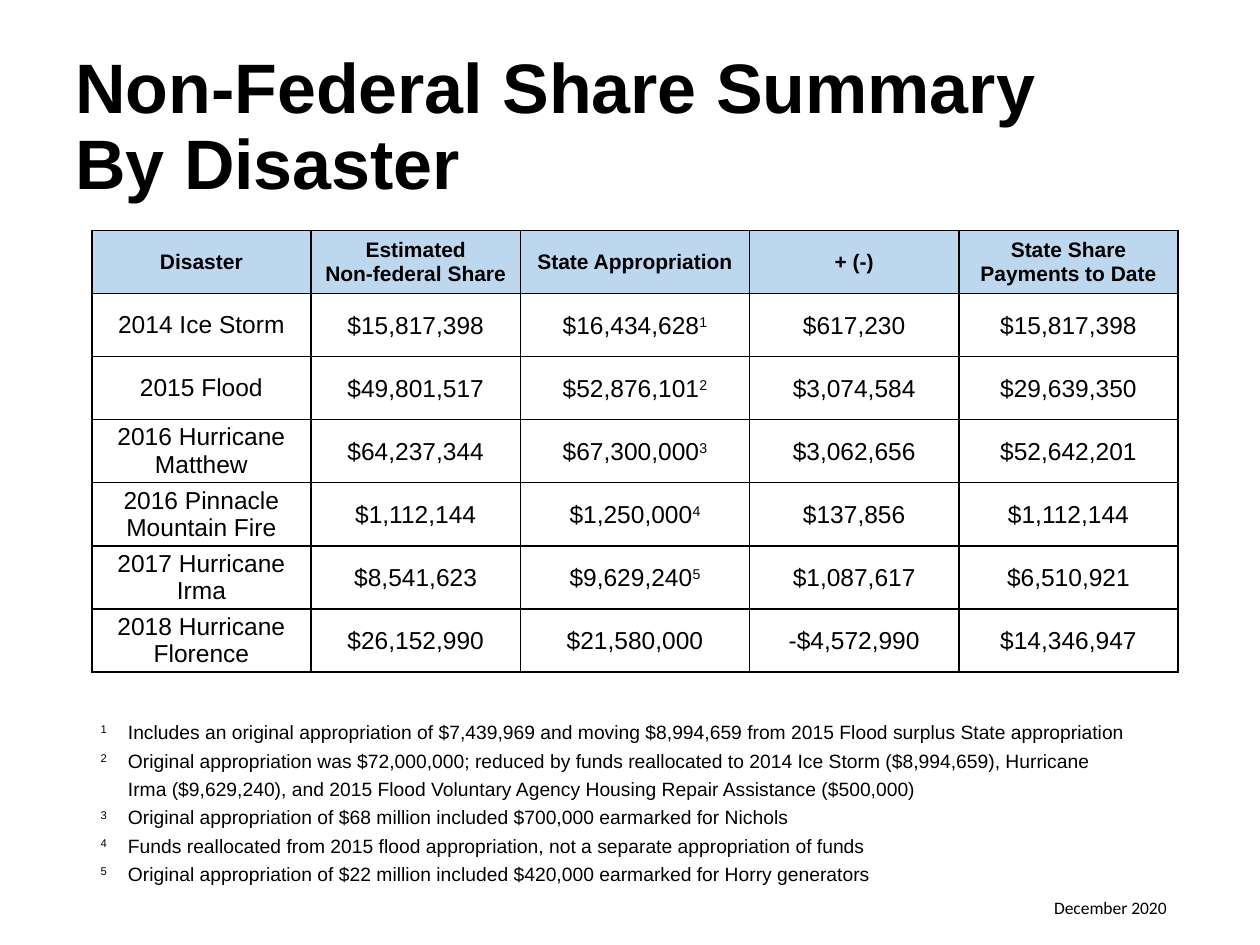
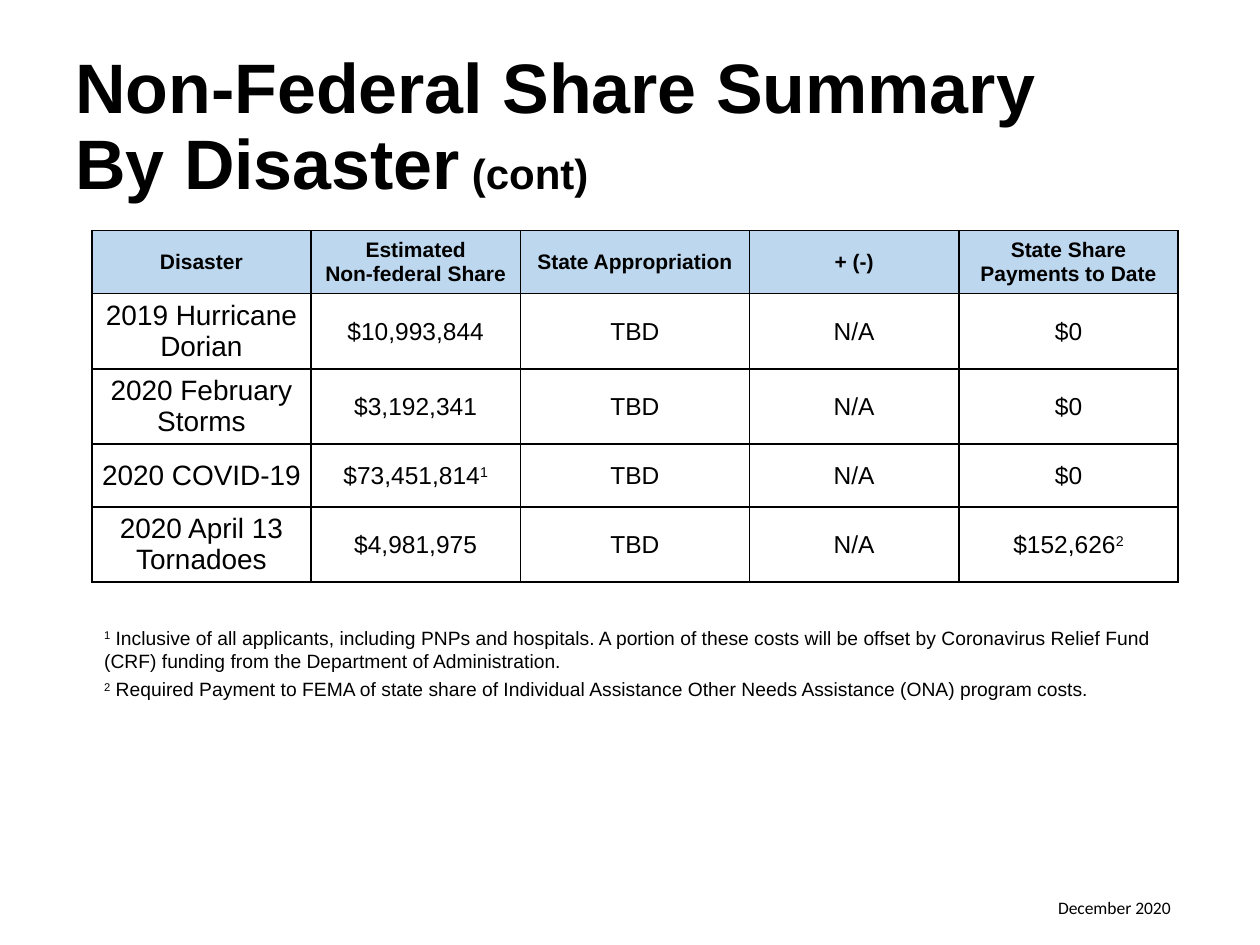
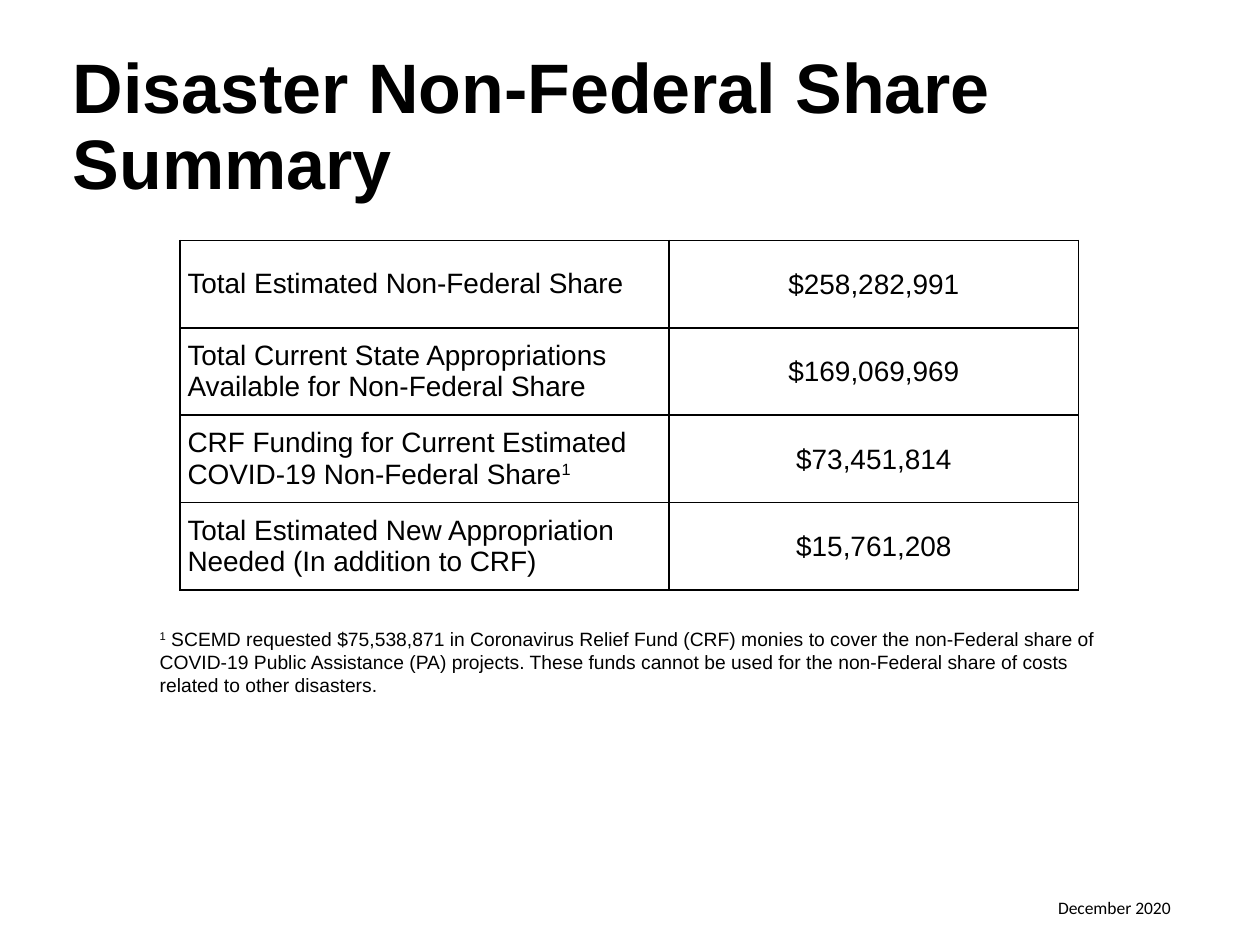
"""Builds three slides that sum up the non-federal share of disaster costs."""
from lxml.etree import SubElement as Sub
from pptx import Presentation
from pptx.dml.color import RGBColor as Rgb
from pptx.enum.text import MSO_ANCHOR as Anchor, PP_ALIGN as Align
from pptx.oxml.ns import qn
from pptx.util import Cm, Pt

BLACK, WHITE, BLUE = "000000", "FFFFFF", "BDD7EE"
TITLE = "Non-Federal Share Summary\vBy Disaster"
HEAD = ["Disaster", "Estimated\nNon-federal Share", "State Appropriation",
        "+ (-)", "State Share Payments to Date"]
WIDE = [4.42, 4.22, 4.62, 4.22, 4.42]


def write(frame, text, size, name="Arial", bold=False, align=Align.LEFT):
    """Fill a frame line by line, raising the parts between carets."""
    lines = text.split("\n")
    frame.text = text.replace("^", "")
    for para, line in zip(frame.paragraphs, lines):
        parts = line.split("^")
        para.text = parts[0]
        para.alignment = align
        for spot, part in enumerate(parts[1:], 1):
            run = para.add_run()
            run.text = part
            if spot % 2:
                run.font._element.set("baseline", "30000")
        for run in para.runs:
            font = run.font
            font.name, font.size, font.bold = name, Pt(size), bold
            font.color.rgb = Rgb.from_string(BLACK)


def add_text(slide, box, text, size, **look):
    """Add a wrapped text box and return its frame."""
    frame = slide.shapes.add_textbox(*[Cm(n) for n in box]).text_frame
    frame.word_wrap = True
    write(frame, text, size, **look)
    return frame


pages = [
    dict(title=TITLE, more="", left=1.27, date=21.0,
         spot=(1.85, 4.65), cols=WIDE, tall=1.27, sizes=(14, 14), head=True,
         rows=[
             HEAD,
             ["2014 Ice Storm", "$15,817,398", "$16,434,628^1", "$617,230", "$15,817,398"],
             ["2015 Flood", "$49,801,517", "$52,876,101^2", "$3,074,584", "$29,639,350"],
             ["2016 Hurricane Matthew", "$64,237,344", "$67,300,000^3", "$3,062,656",
              "$52,642,201"],
             ["2016 Pinnacle Mountain Fire", "$1,112,144", "$1,250,000^4", "$137,856",
              "$1,112,144"],
             ["2017 Hurricane Irma", "$8,541,623", "$9,629,240^5", "$1,087,617", "$6,510,921"],
             ["2018 Hurricane\nFlorence", "$26,152,990", "$21,580,000", "-$4,572,990",
              "$14,346,947"]],
         box=(1.78, 14.4, 21.87, 4.2), hang=0.55,
         notes="^1^\tIncludes an original appropriation of $7,439,969 and moving $8,994,659 "
               "from 2015 Flood surplus State appropriation\n"
               "^2^\tOriginal appropriation was $72,000,000; reduced by funds reallocated to "
               "2014 Ice Storm ($8,994,659), Hurricane\n"
               "\tIrma ($9,629,240), and 2015 Flood Voluntary Agency Housing Repair "
               "Assistance ($500,000)\n"
               "^3^\tOriginal appropriation of $68 million included $700,000 earmarked for "
               "Nichols\n"
               "^4^\tFunds reallocated from 2015 flood appropriation, not a separate "
               "appropriation of funds\n"
               "^5^\tOriginal appropriation of $22 million included $420,000 earmarked for "
               "Horry generators"),
    dict(title=TITLE, more=" (cont)", left=1.27, date=21.08,
         spot=(1.85, 4.65), cols=WIDE, tall=1.27, sizes=(16, 14), head=True,
         rows=[
             HEAD,
             ["2019 Hurricane Dorian", "$10,993,844", "TBD", "N/A", "$0"],
             ["2020 February Storms", "$3,192,341", "TBD", "N/A", "$0"],
             ["2020 COVID-19", "$73,451,814^1", "TBD", "N/A", "$0"],
             ["2020 April 13 Tornadoes", "$4,981,975", "TBD", "N/A", "$152,626^2"]],
         box=(1.85, 12.5, 21.87, 2.92), hang=0,
         notes="^1^ Inclusive of all applicants, including PNPs and hospitals. A portion of "
               "these costs will be offset by Coronavirus Relief Fund (CRF) funding from the "
               "Department of Administration.\n"
               "^2^ Required Payment to FEMA of state share of Individual Assistance Other "
               "Needs Assistance (ONA) program costs."),
    dict(title="Disaster Non-Federal Share Summary", more="", left=1.22, date=21.08,
         spot=(3.63, 4.85), cols=[9.86, 8.25], tall=1.76, sizes=(16, 16), head=False,
         rows=[
             ["Total Estimated Non-Federal Share", "$258,282,991"],
             ["Total Current State Appropriations Available for Non-Federal Share",
              "$169,069,969"],
             ["CRF Funding for Current Estimated COVID-19 Non-Federal Share^1", "$73,451,814"],
             ["Total Estimated New Appropriation Needed (In addition to CRF)",
              "$15,761,208"]],
         box=(2.97, 12.52, 19.48, 2.13), hang=0,
         notes="^1^ SCEMD requested $75,538,871 in Coronavirus Relief Fund (CRF) monies to "
               "cover the non-Federal share of COVID-19 Public Assistance (PA) projects. These "
               "funds cannot be used for the non-Federal share of costs related to other "
               "disasters."),
]

deck = Presentation()
deck.slide_width, deck.slide_height = Cm(25.4), Cm(19.05)

for page in pages:
    slide = deck.slides.add_slide(deck.slide_layouts[6])

    rows, cols = page["rows"], page["cols"]
    size = sum(cols), page["tall"] * len(rows)
    table = slide.shapes.add_table(
        len(rows), len(cols), *[Cm(n) for n in page["spot"] + size]).table
    table.first_row = page["head"]
    table.horz_banding = False
    for col, width in zip(table.columns, cols):
        col.width = Cm(width)
    for r, row in enumerate(rows):
        table.rows[r].height = Cm(page["tall"])
        top = page["head"] and r == 0
        for c, text in enumerate(row):
            cell = table.cell(r, c)
            label = top or c == 0
            left = c == 0 and not page["head"]
            write(cell.text_frame, text, 12 if top else page["sizes"][c > 0],
                  bold=top, align=Align.LEFT if left else Align.CENTER)
            cell.vertical_anchor = Anchor.MIDDLE
            cell.margin_left = cell.margin_right = Cm(0.15 if label else 0.03)
            cell.margin_top = Cm(0.08 if label else 0.03)
            cell.margin_bottom = Cm(0.08 if label else 0)
            props = cell._tc.get_or_add_tcPr()
            for side in ("lnL", "lnR", "lnT", "lnB"):
                line = Sub(props, qn("a:" + side), w=str(Pt(1)))
                Sub(Sub(line, qn("a:solidFill")), qn("a:srgbClr"), val=BLACK)
            cell.fill.solid()
            cell.fill.fore_color.rgb = Rgb.from_string(BLUE if top else WHITE)

    notes = add_text(slide, page["box"], page["notes"], 11)
    for para in notes.paragraphs:
        para.space_after = Pt(3)
        if page["hang"]:
            props = para._p.get_or_add_pPr()
            props.set("marL", str(Cm(page["hang"])))
            props.set("indent", str(-Cm(page["hang"])))

    date = add_text(slide, (page["date"], 17.96, 2.82, 0.69), "December 2020", 10,
                    name="Calibri")
    date.word_wrap = False

    title = add_text(slide, (page["left"], 0.76, 20.3, 3.68), page["title"], 40, bold=True)
    title.vertical_anchor = Anchor.MIDDLE
    para = title.paragraphs[0]
    para.line_spacing = 0.9
    if page["more"]:
        run = para.add_run()
        run.text = page["more"]
        run.font.name, run.font.size, run.font.bold = "Arial", Pt(24), True
        run.font.color.rgb = Rgb.from_string(BLACK)

deck.save("out.pptx")
